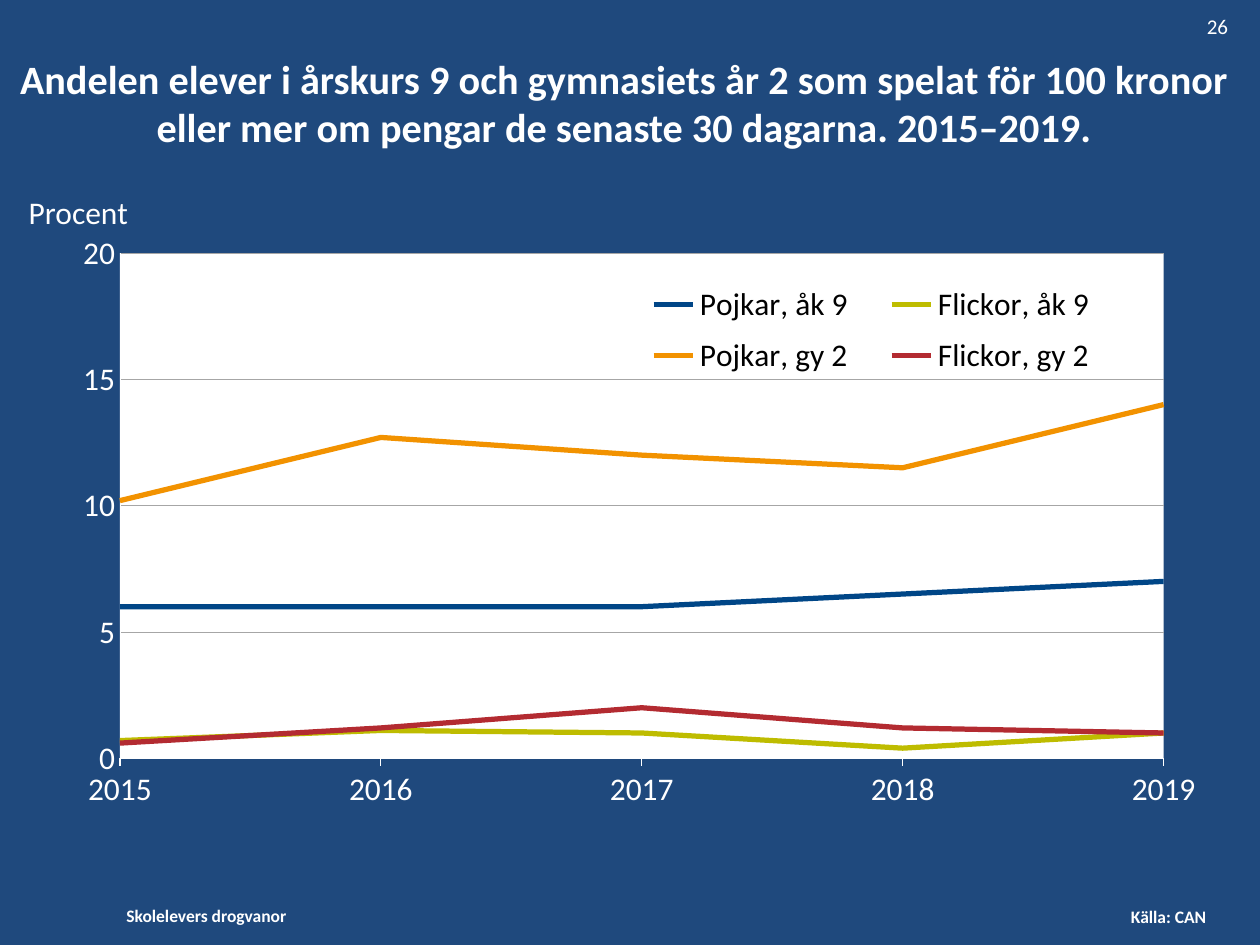
from dataclasses import dataclass

from lxml.etree import SubElement
from pptx import Presentation
from pptx.chart.data import CategoryChartData
from pptx.dml.color import RGBColor
from pptx.enum.chart import XL_CHART_TYPE, XL_LEGEND_POSITION, XL_TICK_MARK
from pptx.enum.text import MSO_ANCHOR, MSO_AUTO_SIZE, PP_ALIGN
from pptx.oxml import parse_xml
from pptx.oxml.ns import nsdecls, qn
from pptx.util import Cm, Pt


@dataclass(frozen=True)
class Theme:
    font: str = "Calibri"
    background: str = "1F497D"
    light: str = "FFFFFF"
    dark: str = "000000"
    grid: str = "A6A6A6"
    title: float = 23
    label: float = 18
    number: float = 12
    footer: float = 10
    thin: float = 0.23
    axis: float = 0.75
    series: float = 3


@dataclass(frozen=True)
class Label:
    text: str
    left: float
    top: float
    width: float
    height: float
    size: float
    bold: bool = False


@dataclass(frozen=True)
class Series:
    name: str
    values: tuple
    color: str


THEME = Theme()

LABELS = [
    Label("Skolelevers drogvanor", 2.3, 18.11, 4.25, 0.69, THEME.footer, True),
    Label("Källa: CAN", 22.55, 18.14, 2.39, 0.69, THEME.footer, True),
    Label("Procent", 0.33, 3.76, 2.82, 1.02, THEME.label),
    Label("26", 24.08, 0.15, 1.32, 0.76, THEME.number),
]

YEARS = ["2015", "2016", "2017", "2018", "2019"]
SERIES = [
    Series("Pojkar, åk 9", (6, 6, 6, 6.5, 7), "004687"),
    Series("Flickor, åk 9", (0.7, 1.1, 1, 0.4, 1), "BEBC00"),
    Series("Pojkar, gy 2", (10.2, 12.7, 12, 11.5, 14), "F29200"),
    Series("Flickor, gy 2", (0.6, 1.2, 2, 1.2, 1), "B32B31"),
]


def rgb(color: str) -> RGBColor:
    return RGBColor.from_string(color)


def set_font(font, size: float, color: str = THEME.light, bold: bool = False) -> None:
    for name, value in {"name": THEME.font, "size": Pt(size), "bold": bold}.items():
        setattr(font, name, value)
    font.color.rgb = rgb(color)


def set_line(line, color: str, width: float) -> None:
    line.color.rgb = rgb(color)
    line.width = Pt(width)


def add_label(slide, label: Label) -> None:
    sp = slide.shapes.add_textbox(
        *map(Cm, (label.left, label.top, label.width, label.height)))
    tf = sp.text_frame
    tf.word_wrap = True
    r = tf.paragraphs[0].add_run()
    r.text = label.text
    set_font(r.font, label.size, bold=label.bold)


def set_title(slide, text: str) -> None:
    sp = slide.shapes.title
    for name, value in {"left": 0.1, "top": 0.76, "width": 25, "height": 2.62}.items():
        setattr(sp, name, Cm(value))
    tf = sp.text_frame
    tf.text = text
    for name, value in {"word_wrap": True, "auto_size": MSO_AUTO_SIZE.NONE,
                        "vertical_anchor": MSO_ANCHOR.MIDDLE}.items():
        setattr(tf, name, value)
    p = tf.paragraphs[0]
    p.alignment = PP_ALIGN.CENTER
    set_font(p.runs[0].font, THEME.title, bold=True)


def set_layout(parent, index: int, x: float, y: float, w: float, h: float,
               inner: bool = False) -> None:
    """Place a chart part by fractions of the chart's size."""
    for old in parent.findall(qn("c:layout")):
        parent.remove(old)
    layout = parse_xml(f"<c:layout {nsdecls('c')}><c:manualLayout/></c:layout>")
    fields = {"layoutTarget": "inner"} if inner else {}
    fields |= {"xMode": "edge", "yMode": "edge", "x": x, "y": y, "w": w, "h": h}
    for tag, value in fields.items():
        SubElement(layout[0], qn(f"c:{tag}")).set("val", str(value))
    parent.insert(index, layout)


def format_axes(chart) -> None:
    cat, val = chart.category_axis, chart.value_axis
    for axis, mark, width in ((cat, XL_TICK_MARK.OUTSIDE, THEME.axis),
                              (val, XL_TICK_MARK.NONE, THEME.thin)):
        axis.major_tick_mark = mark
        axis.minor_tick_mark = XL_TICK_MARK.NONE
        set_font(axis.tick_labels.font, THEME.label)
        set_line(axis.format.line, THEME.light, width)
    for name, value in {"minimum_scale": 0, "maximum_scale": 20, "major_unit": 5,
                        "has_major_gridlines": True}.items():
        setattr(val, name, value)
    set_line(val.major_gridlines.format.line, THEME.grid, THEME.thin)
    val.tick_labels.number_format = "0"
    val.tick_labels.number_format_is_linked = False
    # Lines start and end on the edges of the plot
    val._element.find(qn("c:crosses")).addnext(
        parse_xml(f"<c:crossBetween {nsdecls('c')} val='midCat'/>"))


def format_plot_area(chart) -> None:
    area = chart._chartSpace.chart.plotArea
    set_layout(area, 0, 0.062, 0.089, 0.914, 0.794, inner=True)
    area.append(parse_xml(
        f"<c:spPr {nsdecls('c', 'a')}><a:solidFill><a:srgbClr val='{THEME.light}'/>"
        "</a:solidFill><a:ln><a:noFill/></a:ln></c:spPr>"))


def format_legend(chart) -> None:
    chart.has_legend = True
    legend = chart.legend
    legend.position = XL_LEGEND_POSITION.TOP
    legend.include_in_layout = False
    set_font(legend.font, THEME.label, THEME.dark)
    set_layout(legend._element, 1, 0.5, 0.12, 0.44, 0.18)


def add_gambling_chart(slide) -> None:
    data = CategoryChartData()
    data.categories = YEARS
    for series in SERIES:
        data.add_series(series.name, series.values)
    chart = slide.shapes.add_chart(
        XL_CHART_TYPE.LINE, Cm(0.99), Cm(3.96), Cm(23.11), Cm(12.83), data).chart
    chart.has_title = False
    set_font(chart.font, THEME.label)
    plot = chart.plots[0]
    plot.vary_by_categories = False
    for line, series in zip(plot.series, SERIES):
        line.smooth = False
        set_line(line.format.line, series.color, THEME.series)
    format_axes(chart)
    format_plot_area(chart)
    format_legend(chart)


def main() -> None:
    prs = Presentation()
    prs.slide_width, prs.slide_height = Cm(25.4), Cm(19.05)
    s = prs.slides.add_slide(prs.slide_layouts[5])
    s.background.fill.solid()
    s.background.fill.fore_color.rgb = rgb(THEME.background)
    set_title(s, "Andelen elever i årskurs 9 och gymnasiets år 2 som spelat för "
                 "100 kronor eller mer om pengar de senaste 30 dagarna. 2015–2019.")
    add_gambling_chart(s)
    for label in LABELS:
        add_label(s, label)
    prs.save("out.pptx")


if __name__ == "__main__":
    main()
